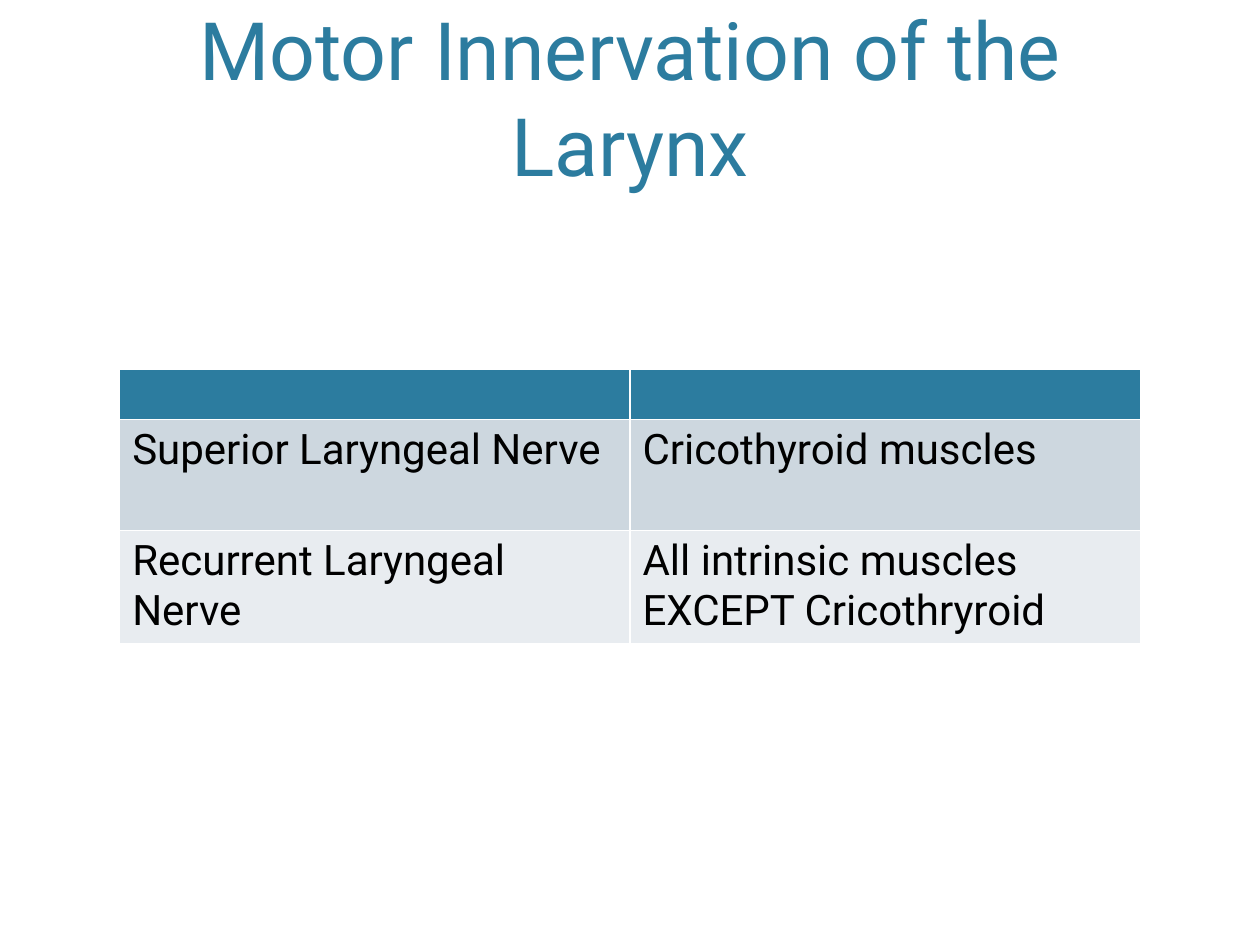
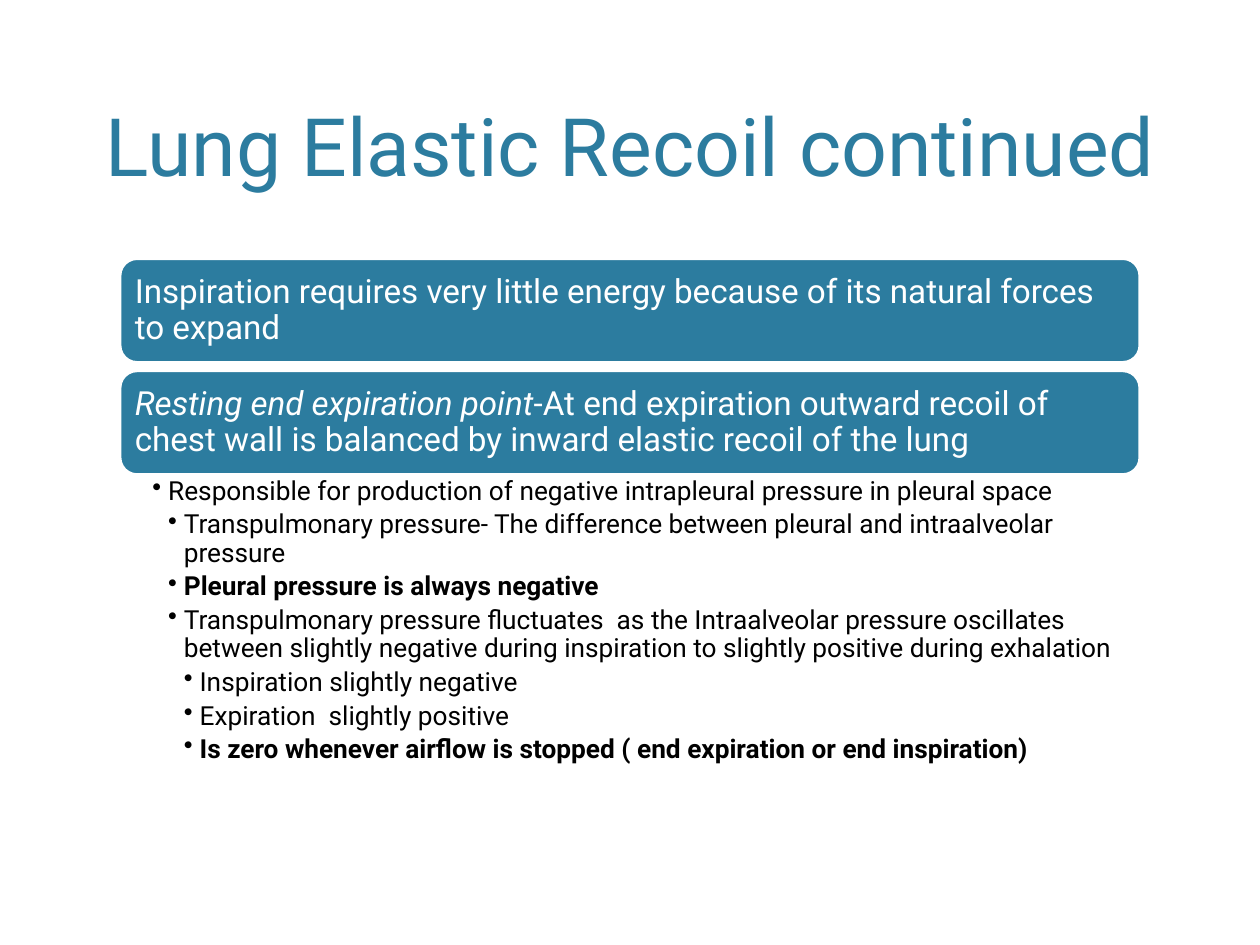
"""Build two slides on the larynx and on lung elastic recoil."""
from lxml.etree import SubElement
from pptx import Presentation
from pptx.dml.color import RGBColor
from pptx.enum.shapes import MSO_SHAPE
from pptx.enum.text import MSO_ANCHOR, PP_ALIGN
from pptx.oxml.ns import qn
from pptx.util import Inches, Pt

COLORS = {"teal": "2C7C9F", "white": "FFFFFF", "black": "000000",
          "band1": "CDD7DF", "band2": "E8ECF0"}
FONT = "Roboto"

prs = Presentation()
prs.slide_width, prs.slide_height = Inches(10), Inches(7.5)
W, H = prs.slide_width, prs.slide_height
LEFT, WIDTH = int(W * 0.095), int(W * 0.81)


def write(p, text, size=15, color="black", bold=False, italic=False):
    r = p.add_run()
    r.text = text
    r.font.name, r.font.size = FONT, Pt(size)
    r.font.bold, r.font.italic = bold, italic
    r.font.color.rgb = RGBColor.from_string(COLORS[color])


def frame(s, anchor, left, top, right, bottom):
    tf = s.text_frame
    tf.word_wrap, tf.vertical_anchor = True, anchor
    tf.margin_left, tf.margin_top = Inches(left), Inches(top)
    tf.margin_right, tf.margin_bottom = Inches(right), Inches(bottom)
    return tf


slides = []
for title in ("Motor Innervation of the Larynx", "Lung Elastic Recoil continued"):
    slide = prs.slides.add_slide(prs.slide_layouts[6])
    sp = slide.shapes.add_textbox(int(W * 0.06), Inches(0.12), int(W * 0.88), Inches(1.46))
    p = frame(sp, MSO_ANCHOR.BOTTOM, 0.1, 0.05, 0.1, 0.05).paragraphs[0]
    p.alignment = PP_ALIGN.CENTER
    write(p, title, size=46, color="teal")
    slides.append(slide)
larynx, lung = slides

rows = [("teal", 0.4, ("", "")),
        ("band1", 0.88, ("Superior Laryngeal Nerve", "Cricothyroid muscles")),
        ("band2", 0.88, ("Recurrent Laryngeal Nerve",
                         "All intrinsic muscles EXCEPT Cricothryroid"))]
table = larynx.shapes.add_table(3, 2, LEFT, Inches(2.93), WIDTH, Inches(2.16)).table
for i, (fill, height, texts) in enumerate(rows):
    table.rows[i].height = Inches(height)
    for j, text in enumerate(texts):
        cell = table.cell(i, j)
        if text:
            write(cell.text_frame.paragraphs[0], text, size=24)
        tcPr = cell._tc.get_or_add_tcPr()
        for side in ("lnL", "lnR", "lnT", "lnB"):
            ln = SubElement(tcPr, qn(f"a:{side}"), w=str(Pt(1)))
            SubElement(SubElement(ln, qn("a:solidFill")), qn("a:srgbClr"), val=COLORS["white"])
        cell.fill.solid()
        cell.fill.fore_color.rgb = RGBColor.from_string(COLORS[fill])

banners = [
    [("Inspiration requires very little energy because of its natural forces to expand", False)],
    [("Resting end expiration point", True),
     ("-At end expiration outward recoil of chest wall is balanced by inward elastic "
      "recoil of the lung", False)],
]
for i, runs in enumerate(banners):
    s = lung.shapes.add_shape(MSO_SHAPE.ROUNDED_RECTANGLE, LEFT, Inches(2.05 + 0.89 * i),
                              WIDTH, Inches(0.83))
    s.shadow.inherit = False
    s.fill.solid()
    s.fill.fore_color.rgb = RGBColor.from_string(COLORS["teal"])
    s.line.color.rgb = RGBColor.from_string(COLORS["white"])
    s.line.width = Pt(2)
    p = frame(s, MSO_ANCHOR.MIDDLE, 0.08, 0.08, 0.08, 0.08).paragraphs[0]
    p.alignment, p.line_spacing = PP_ALIGN.LEFT, 0.9
    for text, italic in runs:
        write(p, text, size=19, color="white", italic=italic)

bullets = [
    (1, False, "Responsible for production of negative intrapleural pressure in pleural space"),
    (2, False, "Transpulmonary pressure- The difference between pleural and intraalveolar pressure"),
    (2, True, "Pleural pressure is always negative"),
    (2, False, "Transpulmonary pressure fluctuates  as the Intraalveolar pressure oscillates "
               "between slightly negative during inspiration to slightly positive during exhalation"),
    (3, False, "Inspiration slightly negative"),
    (3, False, "Expiration  slightly positive"),
    (3, True, "Is zero whenever airflow is stopped ( end expiration or end inspiration)"),
]
sp = lung.shapes.add_textbox(LEFT, Inches(3.76), WIDTH, Inches(2.62))
tf = frame(sp, MSO_ANCHOR.TOP, 0.26, 0.03, 0.15, 0.03)
for i, (level, bold, text) in enumerate(bullets):
    p = tf.add_paragraph() if i else tf.paragraphs[0]
    p.level, p.line_spacing, p.space_after = level, 0.9, Pt(3)
    pPr = p._p.get_or_add_pPr()
    pPr.set("marL", str(Inches(0.125 * level)))
    pPr.set("indent", str(-Inches(0.125)))
    SubElement(pPr, qn("a:buChar"), char="•")
    write(p, text, bold=bold)

prs.save("out.pptx")
